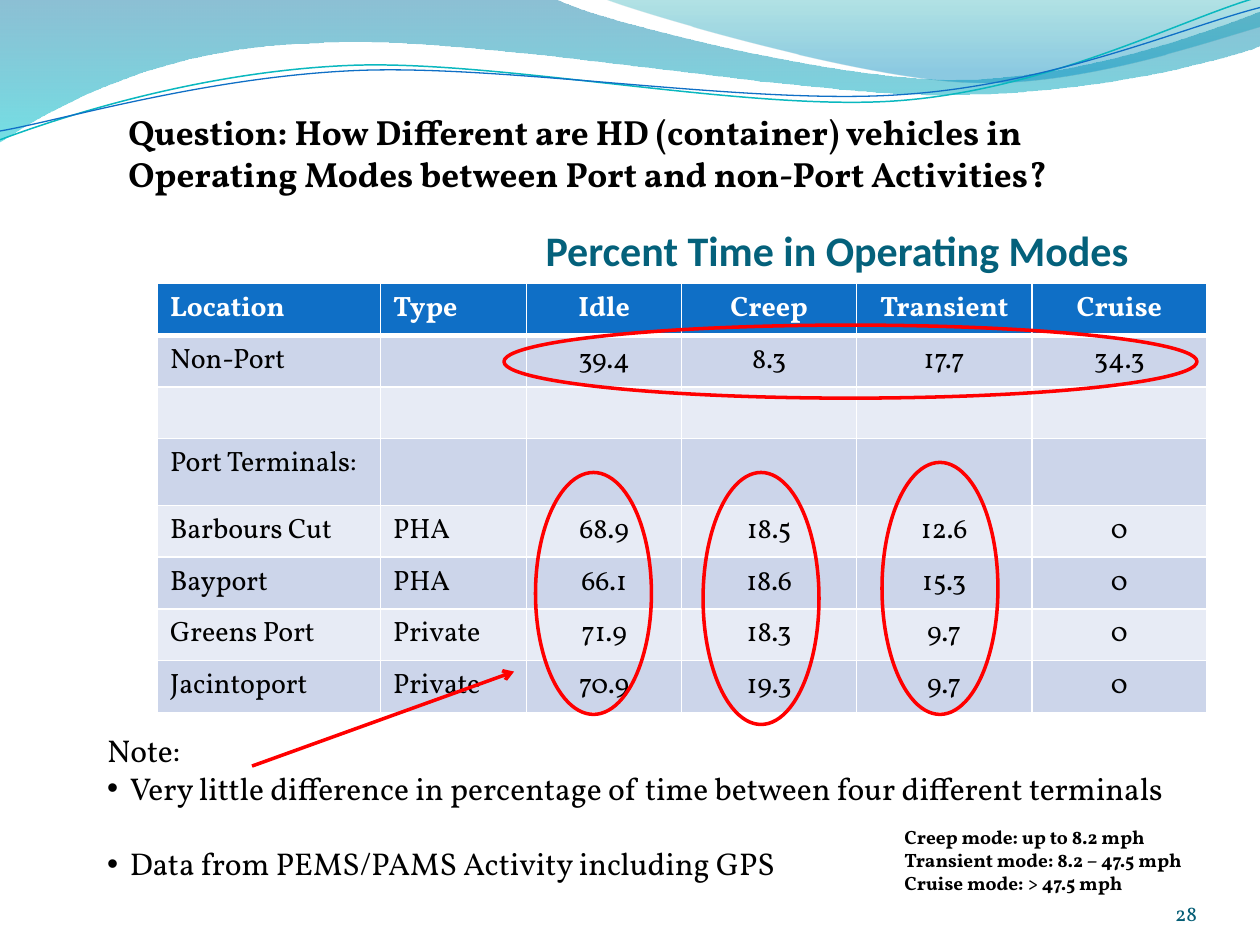
from lxml import etree
from pptx import Presentation, util as u
from pptx.dml.color import RGBColor
from pptx.enum import shapes, text
from pptx.oxml.ns import qn

Inches, Pt = u.Inches, u.Pt
color = RGBColor.from_string
CENTER, LEFT, RIGHT = text.PP_ALIGN.CENTER, text.PP_ALIGN.LEFT, text.PP_ALIGN.RIGHT
RED = "FF0000"


def style(paragraph, size, hex_color="000000", bold=False, align=LEFT, font="Vollkorn"):
    paragraph.font.size = Pt(size)
    paragraph.font.name = font
    paragraph.font.bold = bold
    paragraph.font.color.rgb = color(hex_color)
    paragraph.alignment = align
    paragraph.space_before = Pt(0)


def draw_curve(start, segments, closed):
    """Draw an outline of straight (2 numbers) and cubic (6 numbers) segments."""
    points = [(round(s[k] * 1000), round(s[k + 1] * 1000))
              for s in segments for k in range(0, len(s), 2)]
    builder = slide.shapes.build_freeform(round(start[0] * 1000), round(start[1] * 1000),
                                          scale=Inches(1) / 1000)
    builder.add_line_segments(points, close=closed)
    shape = builder.convert_to_shape()
    shape.shadow.inherit = False
    # Join each three control points into one cubic segment
    steps = iter(list(shape.element.spPr.iter(qn("a:lnTo"))))
    for segment in segments:
        first = next(steps)
        if len(segment) == 6:
            first.tag = qn("a:cubicBezTo")
            for _ in range(2):
                step = next(steps)
                first.append(step[0])
                step.getparent().remove(step)
    return shape


presentation = Presentation()
presentation.slide_width, presentation.slide_height = Inches(10), Inches(7.5)
slide = presentation.slides.add_slide(presentation.slide_layouts[1])

# Translucent waves along the top: start, segments, (position, colour, opacity %)
waves = [
    ((0, 0), [(4.4, -0.01), (4.76, 0.17, 6.64, 0.63, 7.58, 0.63),
              (8.53, 0.63, 9.58, 0.26, 10, 0.09), (10.01, 0.36),
              (9.83, 0.44, 8.7, 0.76, 7.46, 0.75), (6.22, 0.75, 3.82, 0.28, 2.57, 0.34),
              (1.29, 0.36, 0.46, 0.83, -0.01, 1.13)],
     [(0, "0074A1", 45), (1, "00C6CF", 55)]),
    ((4.79, -0.01), [(5.09, 0.11, 6.82, 0.62, 7.69, 0.65),
                     (8.56, 0.69, 9.61, 0.32, 10, 0.21), (10, 0)],
     [(0, "00A1A9", 30), (0.8, "008BBF", 45)]),
]
for start, segments, stops in waves:
    wave = draw_curve(start, segments, True)
    wave.line.fill.background()
    wave.fill.gradient()
    wave.fill.gradient_angle = 270
    for stop, (position, hex_color, _) in zip(wave.fill.gradient_stops, stops):
        stop.position = position
        stop.color.rgb = color(hex_color)
    for element, (_, _, opacity) in zip(wave.element.spPr.iter(qn("a:srgbClr")), stops):
        etree.SubElement(element, qn("a:alpha"), val=str(opacity * 1000))

# Thin lines over the waves
wave_lines = [
    ((0, 1.11), [(0.48, 0.93, 1.58, 0.57, 2.77, 0.52), (3.95, 0.47, 5.93, 0.89, 7.13, 0.8),
                 (8.33, 0.71, 9.38, 0.15, 9.98, -0.02)], "0AB8BF", 0.85),
    ((0, 1.04), [(0.47, 0.96, 1.64, 0.61, 2.83, 0.56), (4.03, 0.51, 5.97, 0.84, 7.17, 0.75),
                 (8.36, 0.67, 9.41, 0.21, 10, 0.06)], "0F6FC6", 0.75),
]
for start, segments, hex_color, width in wave_lines:
    wave_line = draw_curve(start, segments, False)
    wave_line.fill.background()
    wave_line.line.color.rgb = color(hex_color)
    wave_line.line.width = Pt(width)

# Title above the table
title = slide.shapes.title
title.left, title.top, title.width, title.height = map(Inches, (4.33, 1.58, 4.83, 0.6))
frame = title.text_frame
frame.text = "Percent Time in Operating Modes"
frame.auto_size = text.MSO_AUTO_SIZE.NONE
frame.vertical_anchor = text.MSO_ANCHOR.BOTTOM
frame.margin_left = frame.margin_right = frame.margin_bottom = 0
style(frame.paragraphs[0], 24, "04617B", True, font="Calibri")

# Table of operating modes
rows = [
    ("Location", "Type", "Idle", "Creep", "Transient", "Cruise"),
    ("Non-Port", "", "39.4", "8.3", "17.7", "34.3"),
    ("",) * 6,
    ("Port Terminals:",) + ("",) * 5,
    ("Barbours Cut", "PHA", "68.9", "18.5", "12.6", "0"),
    ("Bayport", "PHA", "66.1", "18.6", "15.3", "0"),
    ("Greens Port", "Private", "71.9", "18.3", "9.7", "0"),
    ("Jacintoport", "Private", "70.9", "19.3", "9.7", "0"),
]
column_widths = [1.77, 1.16, 1.23, 1.39, 1.39, 1.39]
table = slide.shapes.add_table(len(rows), 6, Inches(1.25), Inches(2.25),
                               Inches(8.33), Inches(3.4)).table
for column, width in zip(table.columns, column_widths):
    column.width = Inches(width)
for i, values in enumerate(rows):
    table.rows[i].height = Inches(0.53 if i == 3 else 0.41)
    header = i == 0
    for j, value in enumerate(values):
        cell = table.cell(i, j)
        cell.text = value
        style(cell.text_frame.paragraphs[0], 16, "FFFFFF" if header else "000000",
              header, CENTER if j > 1 else LEFT)
        properties = cell._tc.get_or_add_tcPr()
        for side in ("lnL", "lnR", "lnT", "lnB"):
            thick = (header and side == "lnB") or (i == 1 and side == "lnT")
            border = etree.SubElement(properties, qn("a:" + side), w=str(Pt(3 if thick else 1)))
            border_fill = etree.SubElement(border, qn("a:solidFill"))
            etree.SubElement(border_fill, qn("a:srgbClr"), val="FFFFFF")
        cell.fill.solid()
        cell.fill.fore_color.rgb = color("0F6FC6" if header else "CCD5EA" if i % 2 else "E7EBF5")

# Notes below the table
notes = slide.placeholders[1]
notes.left, notes.top, notes.width, notes.height = map(Inches, (0.75, 5.75, 8.58, 1.31))
frame = notes.text_frame
frame.auto_size = text.MSO_AUTO_SIZE.NONE
frame.margin_right = 0
frame.text = "\n".join([
    "Note:",
    "Very little difference in percentage of time between four different terminals",
    "Data from PEMS/PAMS Activity including GPS",
])
for i, paragraph in enumerate(frame.paragraphs):
    style(paragraph, 18)
    properties = paragraph._p.get_or_add_pPr()
    indent = Inches(0.18) if i else 0
    properties.set("marL", str(indent))
    properties.set("indent", str(-indent))
    bullet = properties.makeelement(qn("a:buChar"), char="•") if i else \
        properties.makeelement(qn("a:buNone"))
    properties.find(qn("a:defRPr")).addprevious(bullet)
frame.paragraphs[2].space_before = Pt(21.6)

# Text boxes: place, size, colour, bold, alignment, anchor, margins, lines
TOP, BOTTOM = text.MSO_ANCHOR.TOP, text.MSO_ANCHOR.BOTTOM
text_boxes = [
    ((0.92, 0.83, 8.33, 0.77), 20, "000000", True, LEFT, TOP, (0.1, 0.05),
     ["Question: How Different are HD (container) vehicles in "
      "Operating Modes between Port and non-Port Activities?"]),
    ((7.08, 6.5, 2.58, 0.66), 11, "000000", True, LEFT, TOP, (0.1, 0.05),
     ["Creep mode: up to 8.2 mph", "Transient mode: 8.2 – 47.5 mph",
      "Cruise mode: > 47.5 mph"]),
    ((8.67, 6.95, 0.83, 0.4), 12, "045D75", False, RIGHT, BOTTOM, (0, 0), ["28"]),
]
for place, size, hex_color, bold, align, anchor, (side, edge), lines in text_boxes:
    frame = slide.shapes.add_textbox(*map(Inches, place)).text_frame
    frame.word_wrap = True
    frame.vertical_anchor = anchor
    frame.margin_left = frame.margin_right = Inches(side)
    frame.margin_top = frame.margin_bottom = Inches(edge)
    frame.text = "\n".join(lines)
    for paragraph in frame.paragraphs:
        style(paragraph, size, hex_color, bold, align)

# Red rings around the compared values
rings = [(4.25, 3.75, 0.92, 1.92), (5.58, 3.75, 0.92, 2), (7, 3.67, 0.92, 2),
         (4, 2.58, 5.5, 0.58)]
for place in rings:
    ring = slide.shapes.add_shape(shapes.MSO_SHAPE.OVAL, *map(Inches, place))
    ring.shadow.inherit = False
    ring.fill.background()
    ring.line.color.rgb = color(RED)
    ring.line.width = Pt(2)

# Arrow from the note to the rings
arrow = slide.shapes.add_connector(shapes.MSO_CONNECTOR.STRAIGHT,
                                   *map(Inches, (2, 6.08, 4.08, 5.33)))
arrow.line.color.rgb = color(RED)
arrow.line.width = Pt(2)
etree.SubElement(arrow.line._get_or_add_ln(), qn("a:tailEnd"), type="arrow")
etree.SubElement(arrow._element.spPr, qn("a:effectLst"))

presentation.save("out.pptx")
